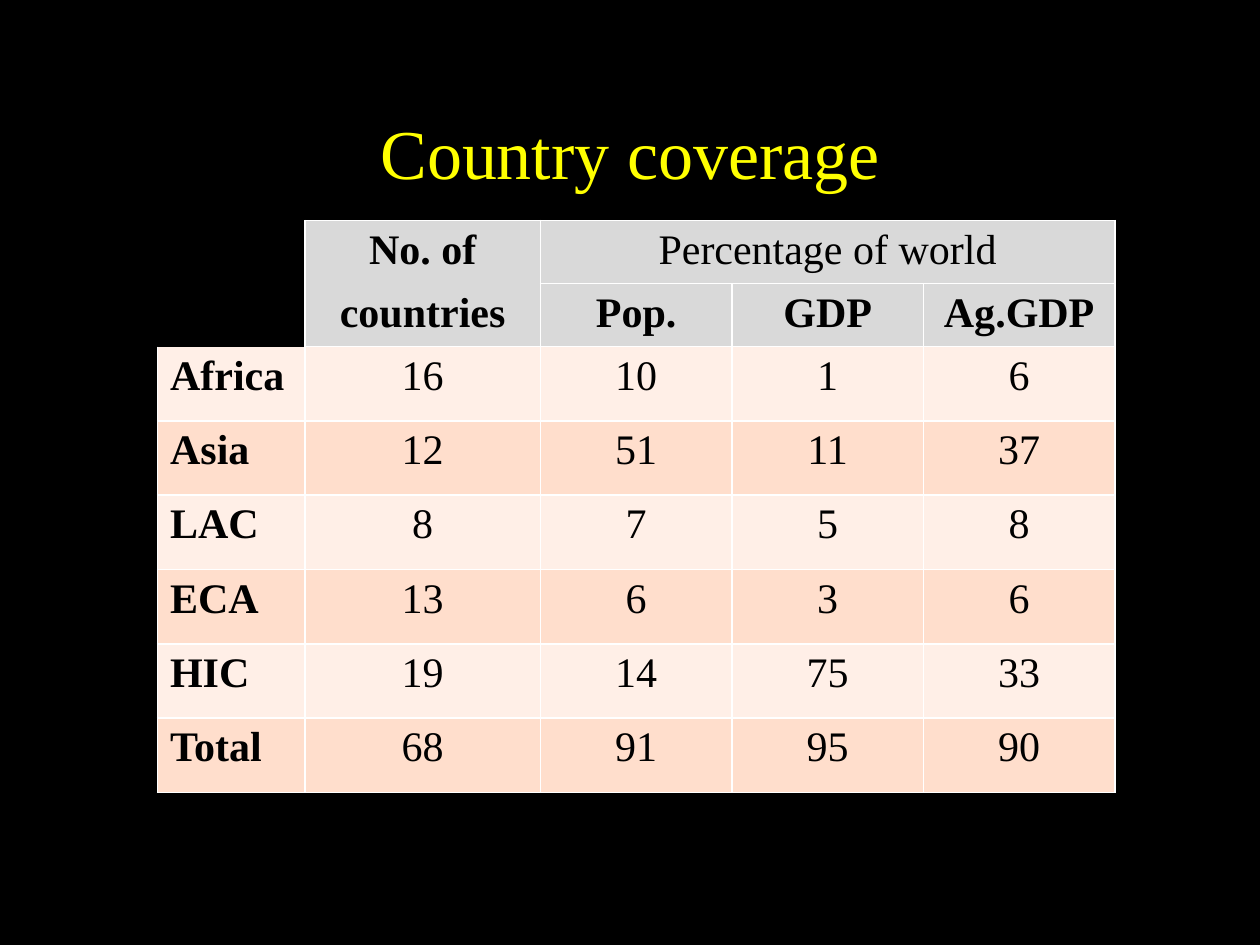
from lxml import etree
from pptx import Presentation
from pptx import util as u
from pptx.dml.color import RGBColor
from pptx.enum import text
from pptx.oxml.ns import qn

BLACK = RGBColor(0x00, 0x00, 0x00)
YELLOW = RGBColor(0xFF, 0xFF, 0x00)
GREY = RGBColor(0xD9, 0xD9, 0xD9)
PALE = RGBColor(0xFF, 0xEF, 0xE7)
PEACH = RGBColor(0xFF, 0xDE, 0xCC)
WHITE = RGBColor(0xFF, 0xFF, 0xFF)
FONT = "Times New Roman"
PLAIN_TABLE = "{2D5ABB26-0587-4C30-8999-92F81FD0307C}"

ROWS = [
    ["", "No. of", "Percentage of world", "", ""],
    ["", "countries", "Pop.", "GDP", "Ag.GDP"],
    ["Africa", "16", "10", "1", "6"],
    ["Asia", "12", "51", "11", "37"],
    ["LAC", "8", "7", "5", "8"],
    ["ECA", "13", "6", "3", "6"],
    ["HIC", "19", "14", "75", "33"],
    ["Total", "68", "91", "95", "90"],
]
COLUMN_WIDTHS = [1.17, 1.87, 1.52, 1.52, 1.52]
ROW_HEIGHTS = [0.47] * 2 + [0.59] * 6


def write(para, words, size, color, bold, align):
    para.text = words
    para.alignment = align
    para.font.size = u.Pt(size)
    for span in para.runs:
        span.font.name = FONT
        span.font.size = u.Pt(size)
        span.font.bold = bold
        span.font.color.rgb = color


def add_borders(cell, sides):
    properties = cell._tc.get_or_add_tcPr()
    for side in "LRTB":
        line = etree.SubElement(properties, qn("a:ln" + side), w=str(u.Pt(1)))
        if side in sides:
            fill = etree.SubElement(line, qn("a:solidFill"))
            etree.SubElement(fill, qn("a:srgbClr"), val=str(WHITE))
        else:
            etree.SubElement(line, qn("a:noFill"))


deck = Presentation()
deck.slide_width, deck.slide_height = u.Inches(10), u.Inches(7.5)
page = deck.slides.add_slide(deck.slide_layouts[6])
page.background.fill.solid()
page.background.fill.fore_color.rgb = BLACK

# Title
box = page.shapes.add_textbox(u.Inches(0.5), u.Inches(0.58), u.Inches(9), u.Inches(1.25))
box.text_frame.word_wrap = True
box.text_frame.vertical_anchor = text.MSO_ANCHOR.MIDDLE
write(box.text_frame.paragraphs[0], "Country coverage", 40, YELLOW, False, text.PP_ALIGN.CENTER)

# Table grid
frame = page.shapes.add_table(
    len(ROWS), len(COLUMN_WIDTHS), u.Inches(1.25), u.Inches(1.75),
    u.Inches(sum(COLUMN_WIDTHS)), u.Inches(sum(ROW_HEIGHTS)))
table = frame.table
table.first_row = table.horz_banding = False
next(frame.element.iter(qn("a:tableStyleId"))).text = PLAIN_TABLE
for column, width in zip(table.columns, COLUMN_WIDTHS):
    column.width = u.Inches(width)
for row, height in zip(table.rows, ROW_HEIGHTS):
    row.height = u.Inches(height)
table.cell(0, 2).merge(table.cell(0, 4))

# Cells: two grey heading rows, then alternating bands
for r, values in enumerate(ROWS):
    for c, value in enumerate(values):
        cell = table.cell(r, c)
        heading = r < 2
        corner = heading and c == 0
        sides = "LRTB"
        if corner:
            sides = "R"
        elif heading and c == 1:
            sides = "LRT" if r == 0 else "LRB"
        elif r == 2 and c == 0:
            sides = "LRB"
        add_borders(cell, sides)
        if corner:
            cell.fill.background()
        else:
            cell.fill.solid()
            cell.fill.fore_color.rgb = GREY if heading else (PALE, PEACH)[r % 2]
        bold = c == 0 or r == 1 or (r == 0 and c == 1)
        align = text.PP_ALIGN.LEFT if c == 0 else text.PP_ALIGN.CENTER
        write(cell.text_frame.paragraphs[0], value, 24, BLACK, bold, align)

deck.save("out.pptx")
